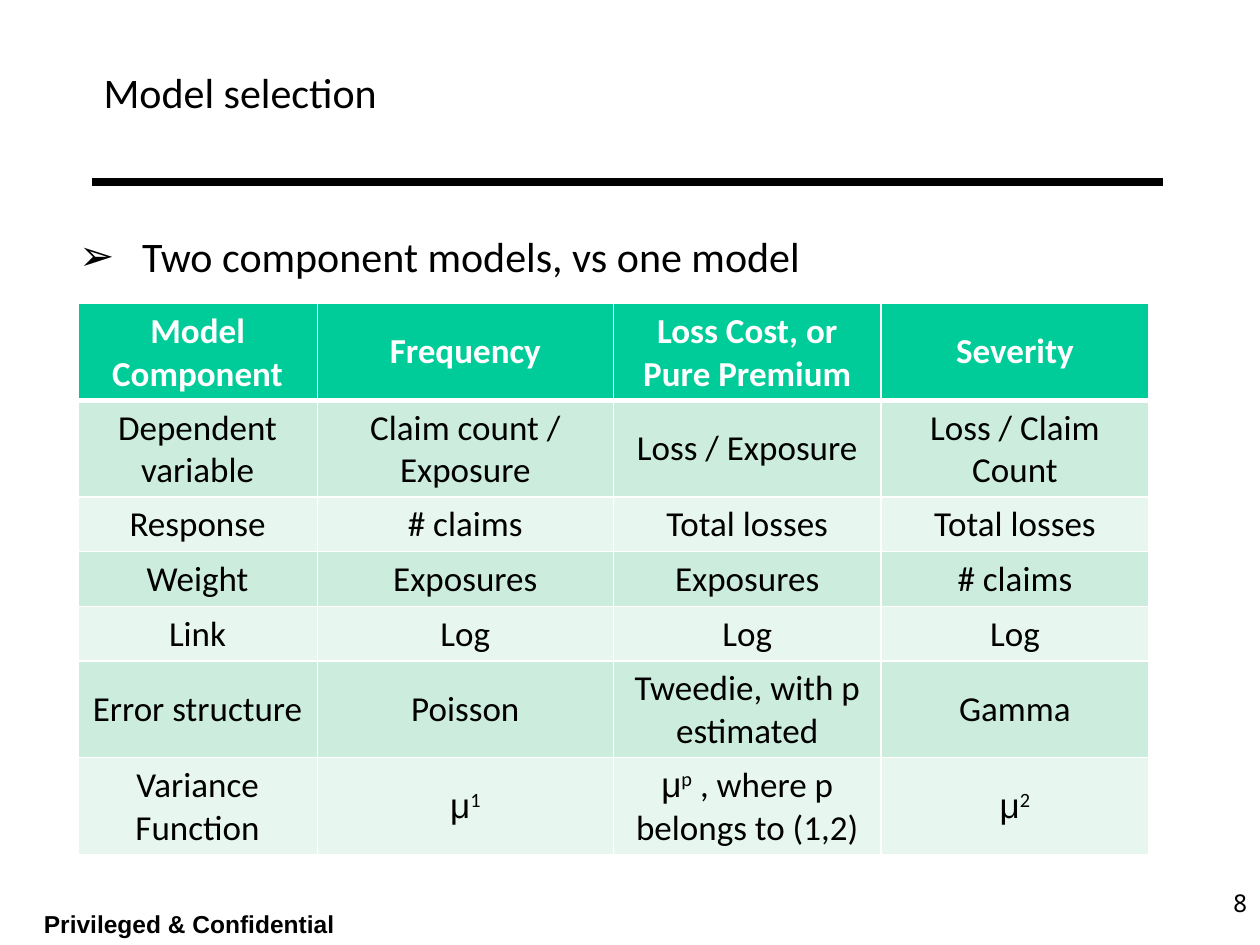
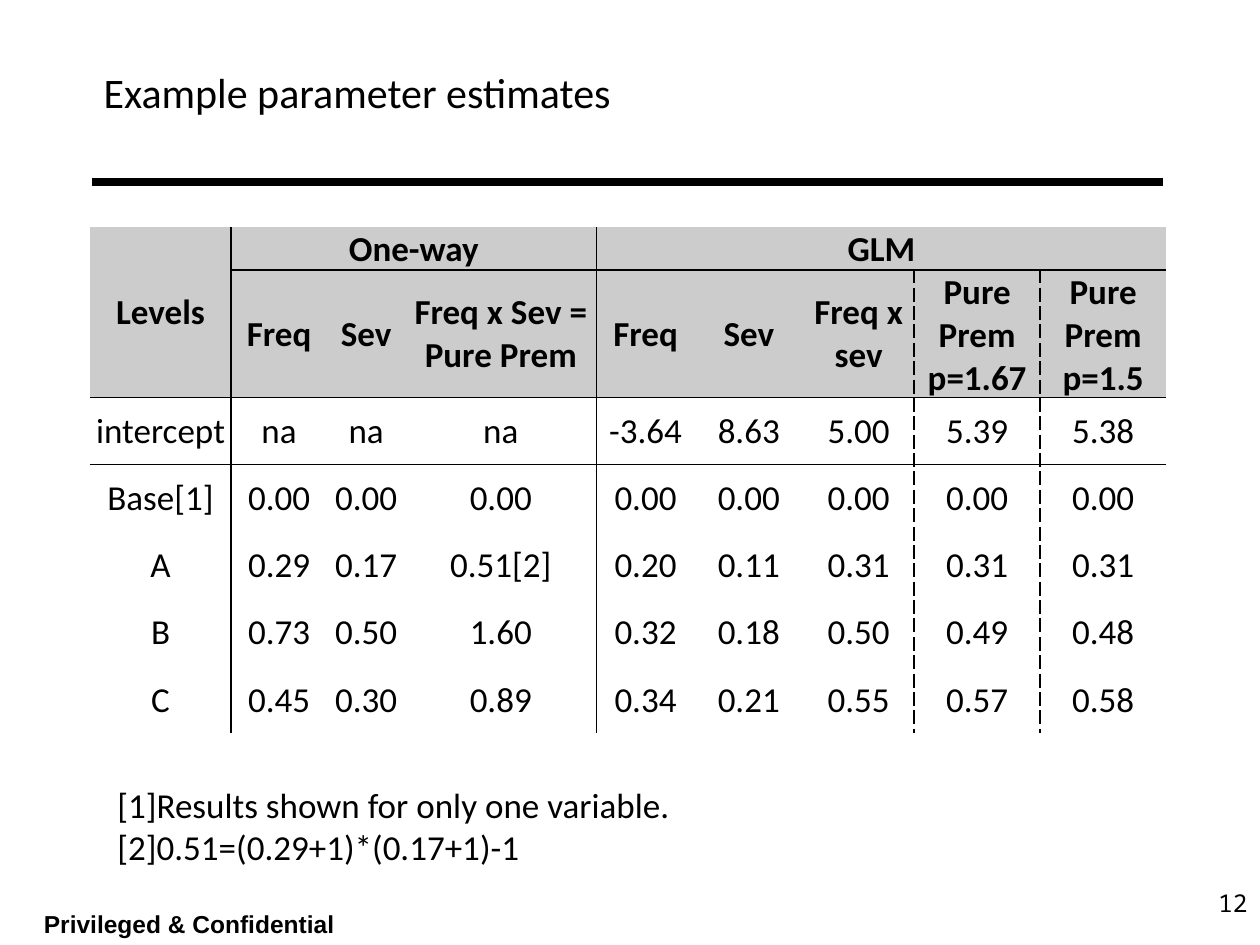
from lxml.etree import SubElement
from pptx import Presentation
from pptx.dml.color import RGBColor
from pptx.enum.shapes import MSO_CONNECTOR
from pptx.enum.text import MSO_ANCHOR, MSO_AUTO_SIZE, PP_ALIGN
from pptx.oxml.ns import qn
from pptx.util import Pt

BLACK, WHITE, GREY = "000000", "FFFFFF", "CCCCCC"
GREEN, MINT, PALE = "00CC99", "CCECDE", "E7F6EF"
BODY_FONT, FOOTER_FONT, NUMBER_FONT = "Calibri", "Arial", "Noto Sans Mono"
NO_STYLE = "{2D5ABB26-0587-4C30-8999-92F81FD0307C}"
TITLE_BOX = (52, 0, 528.5, 105)
BULLET_BOX = (38, 128, 612, 324)
FOOTER_BOX = (18, 516, 186, 24)
NUMBER_BOX = (570, 504, 150, 36)
NOTE_BOX = (60, 444, 520, 55.5)

COMPONENT_ROWS = [
    ["Model Component", "Frequency", "Loss Cost, or Pure Premium", "Severity"],
    ["Dependent variable", "Claim count / Exposure", "Loss / Exposure", "Loss / Claim Count"],
    ["Response", "# claims", "Total losses", "Total losses"],
    ["Weight", "Exposures", "Exposures", "# claims"],
    ["Link", "Log", "Log", "Log"],
    ["Error structure", "Poisson", "Tweedie, with p estimated", "Gamma"],
    ["Variance Function", ("μ", "1"), ("μ", "p", " , where p belongs to (1,2)"), ("μ", "2")],
]
ESTIMATE_ROWS = [
    ["Levels", "One-way", "", "", "GLM", "", "", "", ""],
    ["", "Freq", "Sev", "Freq x Sev = Pure Prem", "Freq", "Sev", "Freq x sev",
     "Pure Prem p=1.67", "Pure Prem p=1.5"],
    ["intercept", "na", "na", "na", "-3.64", "8.63", "5.00", "5.39", "5.38"],
    ["Base[1]"] + ["0.00"] * 8,
    ["A", "0.29", "0.17", "0.51[2]", "0.20", "0.11", "0.31", "0.31", "0.31"],
    ["B", "0.73", "0.50", "1.60", "0.32", "0.18", "0.50", "0.49", "0.48"],
    ["C", "0.45", "0.30", "0.89", "0.34", "0.21", "0.55", "0.57", "0.58"],
]


def colour(value):
    """Turn a hex string into a colour."""
    return RGBColor.from_string(value)


def place(shape, box):
    """Move a shape to a box given in points."""
    shape.left, shape.top, shape.width, shape.height = map(Pt, box)


def write(para, text, size, font=BODY_FONT, ink=BLACK, bold=False):
    """Add one formatted run to a paragraph."""
    span = para.add_run()
    span.text = text
    span.font.size, span.font.name, span.font.bold = Pt(size), font, bold
    span.font.color.rgb = colour(ink)
    return span


def add_text(page, box, lines, size, align=PP_ALIGN.LEFT, **look):
    """Add a wrapping text box with one paragraph per line."""
    frame = page.shapes.add_textbox(*map(Pt, box)).text_frame
    frame.word_wrap = True
    for index, line in enumerate(lines):
        para = frame.add_paragraph() if index else frame.paragraphs[0]
        para.alignment = align
        write(para, line, size, **look)


def add_page(deck, layout, title, number):
    """Add a slide with its title, rule, footer and page number."""
    page = deck.slides.add_slide(deck.slide_layouts[layout])
    heading = page.shapes.title
    place(heading, TITLE_BOX)
    frame = heading.text_frame
    frame.auto_size, frame.vertical_anchor = MSO_AUTO_SIZE.NONE, MSO_ANCHOR.MIDDLE
    frame.paragraphs[0].alignment = PP_ALIGN.LEFT
    write(frame.paragraphs[0], title, 24)
    rule = page.shapes.add_connector(
        MSO_CONNECTOR.STRAIGHT, Pt(52.5), Pt(104), Pt(664.5), Pt(104))
    rule.line.color.rgb, rule.line.width = colour(BLACK), Pt(4.5)
    SubElement(rule._element.spPr, qn("a:effectLst"))
    add_text(page, FOOTER_BOX, ["Privileged & Confidential"], 14, font=FOOTER_FONT, bold=True)
    add_text(page, NUMBER_BOX, [number], 14, PP_ALIGN.RIGHT, font=NUMBER_FONT)
    return page


def fill_bullet(body, text):
    """Place the body placeholder and give it one arrow bullet."""
    place(body, BULLET_BOX)
    body.text_frame.auto_size = MSO_AUTO_SIZE.NONE
    para = body.text_frame.paragraphs[0]
    layout = para._p.get_or_add_pPr()
    layout.set("marL", str(Pt(36)))
    layout.set("indent", str(-Pt(36)))
    SubElement(layout, qn("a:buFont"), typeface=FOOTER_FONT)
    SubElement(layout, qn("a:buChar"), char="➢")
    para.space_before = Pt(0)
    write(para, text, 24)


def draw_edge(cell, side, edge):
    """Draw one cell border from (colour, width, dash), or none."""
    properties = cell._tc.get_or_add_tcPr()
    line = SubElement(properties, qn(f"a:ln{side}"))
    if edge is None:
        SubElement(line, qn("a:noFill"))
        return
    ink, width, dash = edge
    line.set("w", str(Pt(width)))
    SubElement(SubElement(line, qn("a:solidFill")), qn("a:srgbClr"), val=ink)
    SubElement(line, qn("a:prstDash"), val=dash)


def fill_cell(cell, content, ink, bold):
    """Write centred cell text; the second part of a tuple is raised."""
    cell.vertical_anchor = MSO_ANCHOR.MIDDLE
    para = cell.text_frame.paragraphs[0]
    para.alignment = PP_ALIGN.CENTER
    parts = content if isinstance(content, tuple) else (content,)
    for index, part in enumerate(parts):
        font = FOOTER_FONT if part == "μ" else BODY_FONT
        span = write(para, part, 20, font, ink, bold)
        if index == 1:
            span._r.get_or_add_rPr().set("baseline", "30000")


def add_grid(page, corner, rows, widths, heights, fills, heads, head_ink,
             beside, below, merges=(), margins=None):
    """Add a table whose borders follow the beside and below rules."""
    size = (sum(widths), sum(heights))
    table = page.shapes.add_table(len(rows), len(widths), *map(Pt, corner + size)).table
    table._tbl.tblPr.find(qn("a:tableStyleId")).text = NO_STYLE
    table.horz_banding = False
    for column, width in zip(table.columns, widths):
        column.width = Pt(width)
    for line, height in zip(table.rows, heights):
        line.height = Pt(height)
    for first, last in merges:
        table.cell(*first).merge(table.cell(*last))
    for row, contents in enumerate(rows):
        for col, content in enumerate(contents):
            cell = table.cell(row, col)
            if not cell.is_spanned:
                draw_edge(cell, "L", beside(row, col - 1))
                draw_edge(cell, "R", beside(row, col + cell.span_width - 1))
                draw_edge(cell, "T", below(row - 1))
                draw_edge(cell, "B", below(row + cell.span_height - 1))
                is_head = row < heads
                fill_cell(cell, content, head_ink if is_head else BLACK, is_head)
            cell.fill.solid()
            cell.fill.fore_color.rgb = colour(fills[row])
            if margins:
                (cell.margin_left, cell.margin_top,
                 cell.margin_right, cell.margin_bottom) = map(Pt, margins)


def estimate_divider(row, col):
    """Return the border to the right of a column of estimates."""
    if col in (0, 3):
        return BLACK, 1, "solid"
    return (BLACK, 1, "sysDash") if col in (6, 7) and row > 0 else None


def selection_page(deck):
    """Build the slide that compares the model components."""
    page = add_page(deck, 1, "Model selection", "8")
    fill_bullet(page.placeholders[1], "Two component models, vs one model")
    add_grid(page, (44.5, 173.5), COMPONENT_ROWS, [136.8, 169.2, 153, 153], [29.5] * 7,
             [GREEN] + [MINT, PALE] * 3, 1, WHITE,
             beside=lambda row, col: (WHITE, 1, "solid"),
             below=lambda row: (WHITE, 1 if row else 3, "solid"))


def estimates_page(deck):
    """Build the slide with the table of parameter estimates."""
    page = add_page(deck, 5, "Example parameter estimates", "12")
    add_grid(page, (51.5, 129.6), ESTIMATE_ROWS,
             [80.5, 55, 44.5, 109.5, 56, 62, 63.5, 72, 72], [24, 46] + [38.4] * 5,
             [GREY] * 2 + [WHITE] * 5, 2, BLACK,
             beside=estimate_divider,
             below=lambda row: (BLACK, 1, "solid") if row in (0, 1, 2) else None,
             merges=[((0, 0), (1, 0)), ((0, 1), (0, 3)), ((0, 4), (0, 8))],
             margins=(0.7, 0.7, 0.7, 0))
    add_text(page, NOTE_BOX, ["[1]Results shown for only one variable.",
                              "[2]0.51=(0.29+1)*(0.17+1)-1"], 20)


def main():
    """Build and save the deck."""
    deck = Presentation()
    deck.slide_width, deck.slide_height = Pt(720), Pt(540)
    selection_page(deck)
    estimates_page(deck)
    deck.save("out.pptx")


if __name__ == "__main__":
    main()
